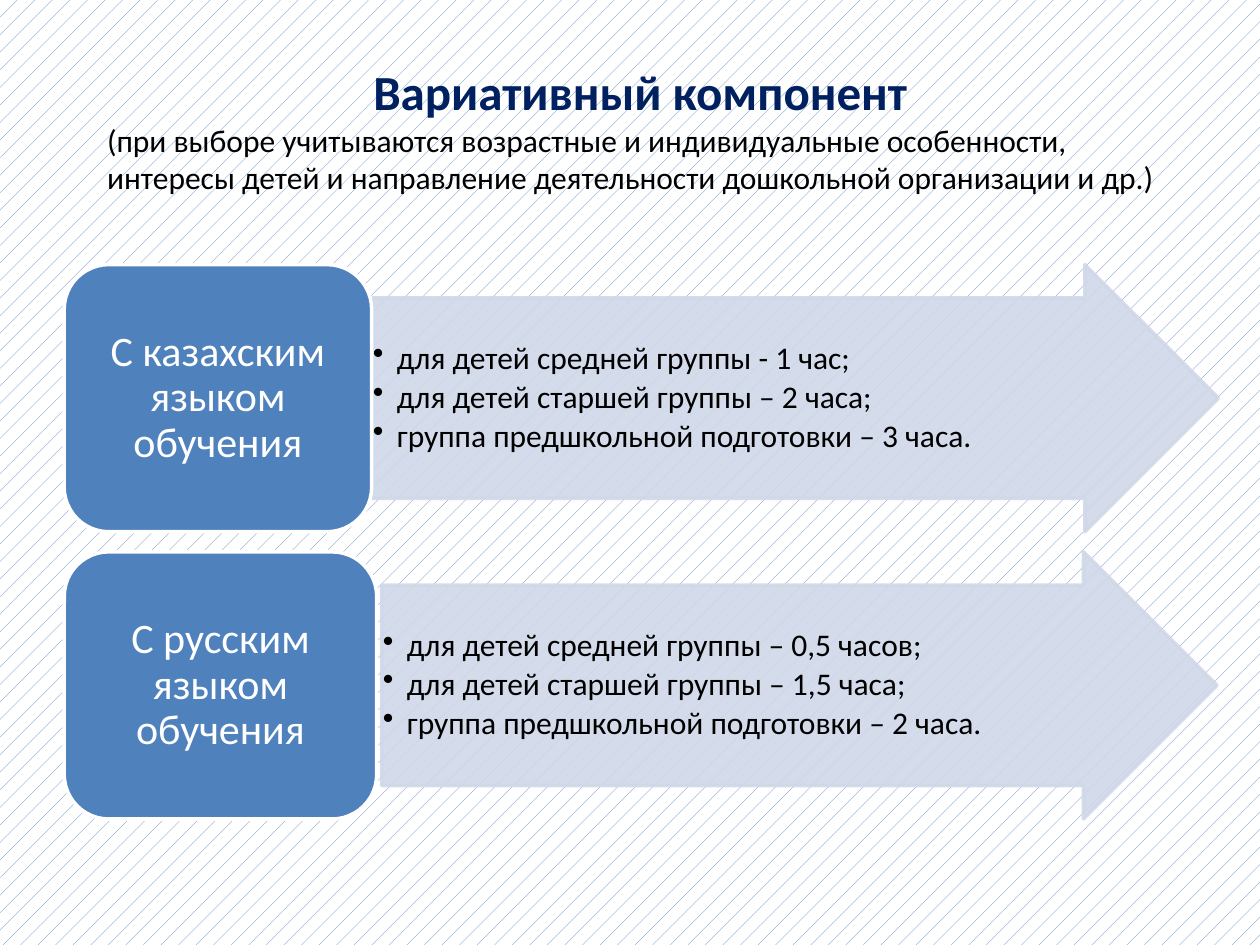
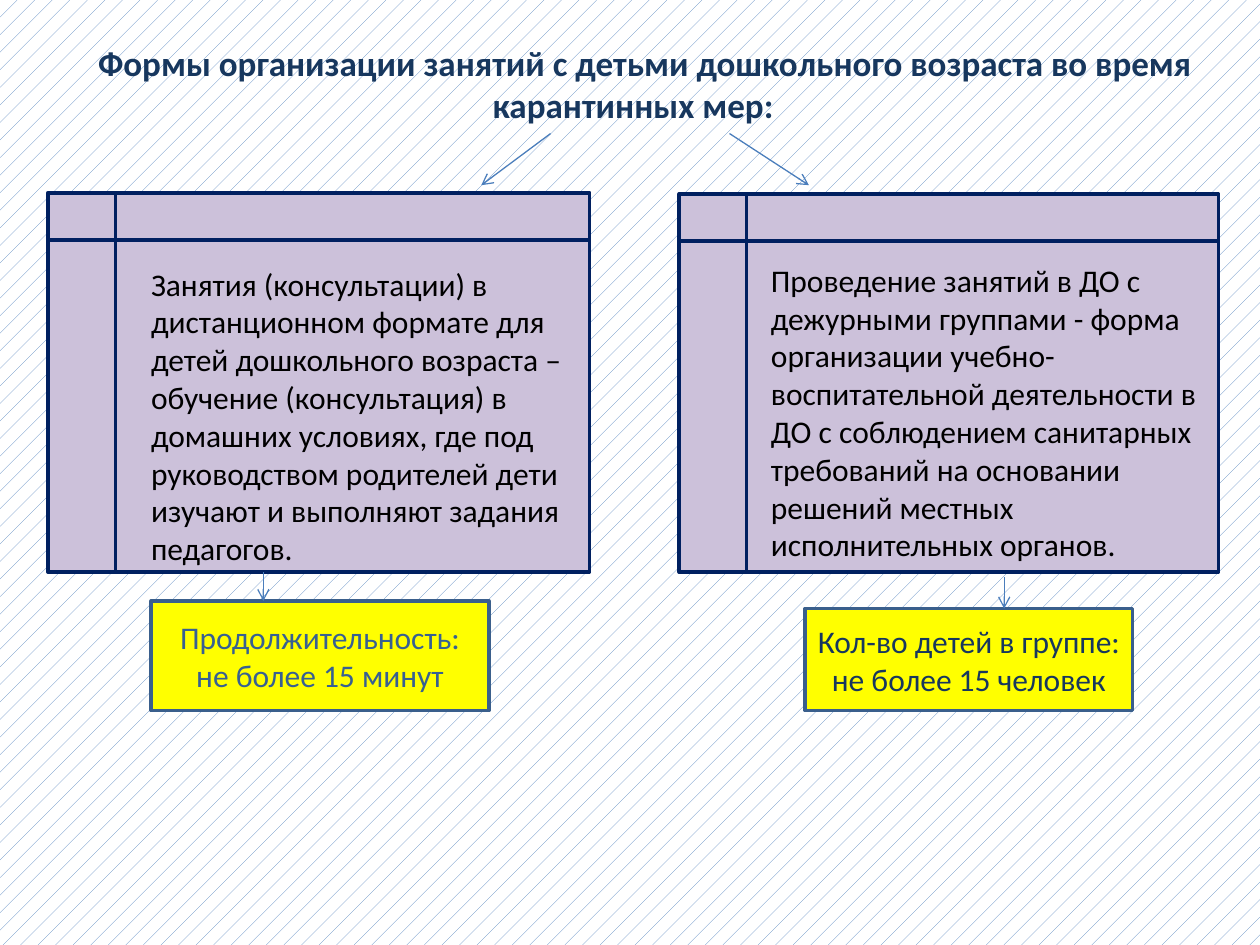
from lxml import etree
from pptx import Presentation
from pptx.dml.color import RGBColor
from pptx.enum.dml import MSO_PATTERN
from pptx.enum.shapes import MSO_CONNECTOR, MSO_SHAPE
from pptx.enum.text import MSO_ANCHOR, MSO_AUTO_SIZE, PP_ALIGN
from pptx.oxml.ns import qn
from pptx.util import Inches, Pt

ARROW, ROUNDED = MSO_SHAPE.RIGHT_ARROW, MSO_SHAPE.ROUNDED_RECTANGLE
STORAGE, BOX = MSO_SHAPE.FLOWCHART_INTERNAL_STORAGE, MSO_SHAPE.RECTANGLE
STRAIGHT = MSO_CONNECTOR.STRAIGHT
LEFT, CENTER = PP_ALIGN.LEFT, PP_ALIGN.CENTER
TOP, MIDDLE = MSO_ANCHOR.TOP, MSO_ANCHOR.MIDDLE
FIT_SHAPE, NO_FIT = MSO_AUTO_SIZE.SHAPE_TO_FIT_TEXT, MSO_AUTO_SIZE.NONE

FONT = "Calibri"
BLUE, PALE, WHITE, BLACK = "4F81BD", "D0D8E8", "FFFFFF", "000000"
NAVY, DARK, STEEL = "002060", "17375E", "376092"
LILAC, YELLOW, EDGE, LINK = "CCC1DA", "FFFF00", "3A5F8C", "4B7EBC"


def add_block(slide, kind, place, fill, line, alpha=None):
    """Add a preset shape with a plain fill and a 2 pt outline."""
    block = slide.shapes.add_shape(kind, *map(Inches, place))
    block.shadow.inherit = False
    block.fill.solid()
    block.line.width = Pt(2)
    for paint, color in ((block.fill, fill), (block.line.fill, line)):
        paint.solid()
        paint.fore_color.rgb = RGBColor.from_string(color)
    if alpha:
        for tone in block._element.spPr.iter(qn("a:srgbClr")):
            etree.SubElement(tone, qn("a:alpha")).set("val", str(alpha * 1000))
    return block


def write(shape, lines, size, color, align=CENTER, anchor=MIDDLE, fit=NO_FIT,
          bold=False, **spacing):
    """Fill a shape with paragraphs that share one format."""
    frame = shape.text_frame
    frame.word_wrap, frame.auto_size, frame.vertical_anchor = True, fit, anchor
    frame.text = "\n".join(lines)
    for paragraph in frame.paragraphs:
        paragraph.alignment = align
        for name, value in spacing.items():
            setattr(paragraph, name, value)
        font = paragraph.font
        font.name, font.size, font.bold = FONT, Pt(size), bold
        font.color.rgb = RGBColor.from_string(color)
    return frame.paragraphs


prs = Presentation()
prs.slide_width, prs.slide_height = Inches(10), Inches(7.5)

# Shared background
backdrop = prs.slide_master.background.fill
backdrop.patterned()
backdrop.pattern = MSO_PATTERN.PERCENT_5
backdrop.fore_color.rgb = RGBColor.from_string(BLUE)
backdrop.back_color.rgb = RGBColor.from_string(WHITE)

# Slides with their titles
titles = [
    ((0.75, 0.44, 8.66, 1.18), 28, NAVY,
     ["Вариативный компонент",
      "(при выборе учитываются возрастные и индивидуальные особенности, "
      "интересы детей и направление деятельности дошкольной организации и др.)"]),
    ((0.3, 0.28, 9.45, 0.77), 20, DARK,
     ["Формы организации занятий с детьми дошкольного возраста "
      "во время карантинных мер:"]),
]
slides, headings = [], []
for place, size, color, lines in titles:
    slide = prs.slides.add_slide(prs.slide_layouts[5])
    title = slide.shapes.title
    title.left, title.top, title.width, title.height = map(Inches, place)
    headings.append(write(title, lines, size, color, anchor=TOP, bold=True))
    slides.append(slide)
variable_part, quarantine = slides

# Slide 1: the second title line is a plain note
note = headings[0][1]
note.alignment = LEFT
note.font.size, note.font.bold = Pt(18), False
note.font.color.rgb = RGBColor.from_string(BLACK)

# Slide 1: one row for each language of teaching
languages = [
    ("С казахским языком обучения", 2.44, 2.95, 6.72,
     ["для детей средней группы - 1 час;",
      "для детей старшей группы – 2 часа;",
      "группа предшкольной подготовки – 3 часа."]),
    ("С русским языком обучения", 2.48, 3.03, 6.63,
     ["для детей средней группы – 0,5 часов;",
      "для детей старшей группы – 1,5 часа;",
      "группа предшкольной подготовки – 2 часа."]),
]
ROW_TOP, ROW_STEP, ROW_HEIGHT = 2.1, 2.28, 2.12
for row, (language, label_width, left, width, hours) in enumerate(languages):
    top = ROW_TOP + row * ROW_STEP
    arrow = add_block(variable_part, ARROW, (left, top, width, ROW_HEIGHT),
                      PALE, PALE, alpha=90)
    arrow.adjustments[0] = 0.75
    for side in ("left", "top", "right", "bottom"):
        setattr(arrow.text_frame, f"margin_{side}", Inches(0.01))
    for item in write(arrow, hours, 18, BLACK, LEFT, line_spacing=0.9,
                      space_after=Pt(2.7)):
        props = item._p.get_or_add_pPr()
        props.set("marL", str(Inches(0.19)))
        props.set("indent", str(-Inches(0.19)))
        bullet = etree.Element(qn("a:buChar"), char="•")
        props.find(qn("a:defRPr")).addprevious(bullet)
    label = add_block(variable_part, ROUNDED, (0.51, top, label_width, ROW_HEIGHT),
                      BLUE, WHITE)
    write(label, [language], 24, WHITE, line_spacing=0.9)

# Slide 2: the first title line sits a little to the right
headings[1][0]._p.get_or_add_pPr().set("indent", str(Inches(0.19)))

# Slide 2: each form of lessons with its limit
forms = [
    ((0.38, 1.53, 4.3, 3.01), (1.1, 2.05, 3.58, 2.52),
     "Занятия (консультации) в дистанционном формате для детей дошкольного "
     "возраста – обучение (консультация) в домашних условиях, где под "
     "руководством родителей дети изучают и выполняют задания педагогов.",
     (1.2, 4.77, 2.68, 0.87), STEEL, ["Продолжительность: не более 15 минут"]),
    ((5.39, 1.54, 4.28, 3), (6.02, 2.02, 3.89, 2.52),
     "Проведение занятий в ДО с дежурными группами - форма организации "
     "учебно-воспитательной деятельности в ДО с соблюдением санитарных "
     "требований на основании решений местных исполнительных органов.",
     (6.39, 4.83, 2.6, 0.81), DARK,
     ["Кол-во детей в группе:", "не более 15 человек"]),
]
for panel, text_place, description, limit_place, color, limit_lines in forms:
    add_block(quarantine, STORAGE, panel, LILAC, NAVY)
    body = quarantine.shapes.add_textbox(*map(Inches, text_place))
    write(body, [description], 18, BLACK, LEFT, TOP, FIT_SHAPE)
    limit = add_block(quarantine, BOX, limit_place, YELLOW, EDGE)
    write(limit, limit_lines, 18, color)

# Slide 2: arrows from the title to the forms and on to the limits
routes = [(5.79, 1.06, 6.42, 1.47), (4.37, 1.06, 3.82, 1.47),
          (7.97, 4.58, 7.97, 4.83), (2.09, 4.54, 2.09, 4.77)]
for route in routes:
    link = quarantine.shapes.add_connector(STRAIGHT, *map(Inches, route))
    link.line.width = Pt(0.75)
    link.line.color.rgb = RGBColor.from_string(LINK)
    etree.SubElement(link.line._get_or_add_ln(), qn("a:tailEnd"), type="arrow")
    etree.SubElement(link._element.spPr, qn("a:effectLst"))

prs.save("out.pptx")
